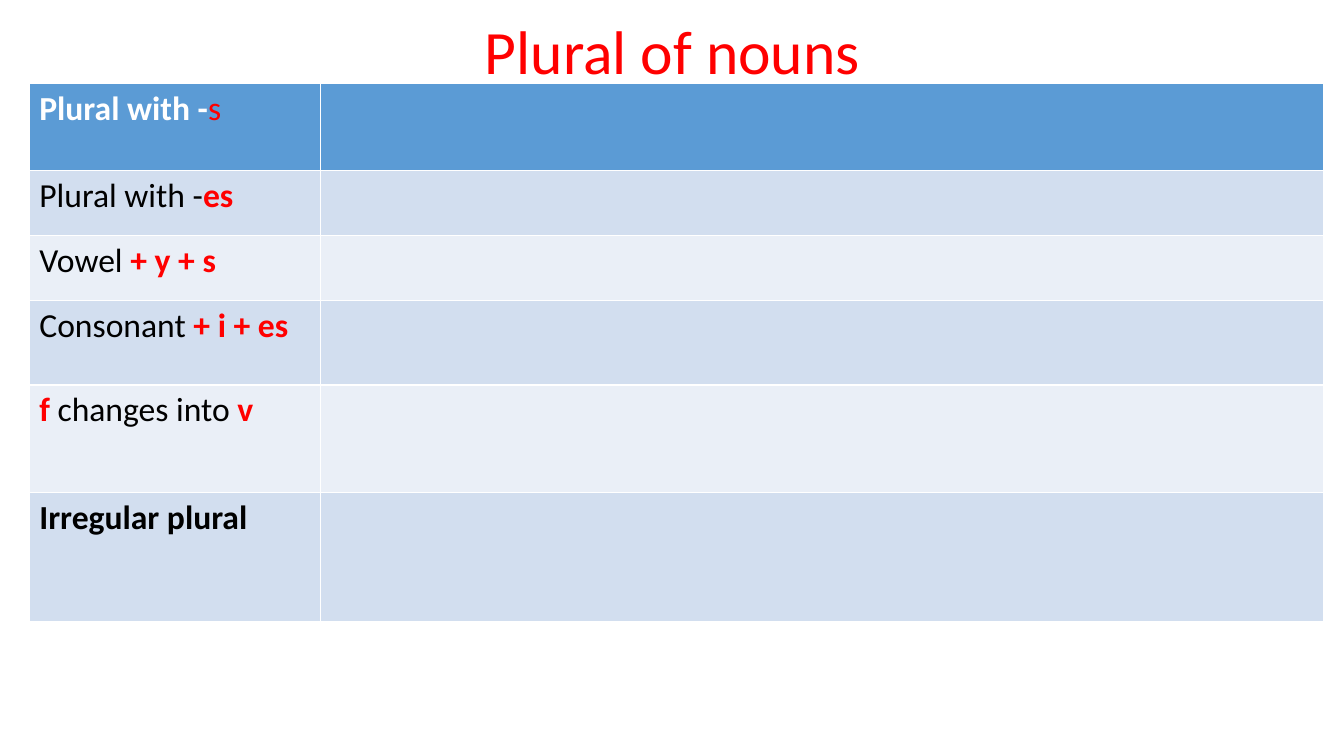
from dataclasses import dataclass

from pptx import Presentation
from pptx.dml.color import RGBColor
from pptx.enum.text import MSO_ANCHOR, MSO_AUTO_SIZE, PP_ALIGN
from pptx.util import Emu, Pt

CENTER = PP_ALIGN.CENTER
MIDDLE = MSO_ANCHOR.MIDDLE
NO_AUTOFIT = MSO_AUTO_SIZE.NONE
TITLE_ONLY = 5
EMU_PER_PX = 9144


@dataclass(frozen=True)
class Theme:
    font: str = "Calibri"
    title_size: int = 44
    rule_size: int = 24
    accent: str = "FF0000"
    ink: str = "000000"
    header_ink: str = "FFFFFF"
    header_fill: str = "5B9BD5"
    band_fills: tuple = ("D2DEEF", "EAEFF7")


THEME = Theme()
COLUMN_WIDTHS = (289, 995)

# Each rule: row height, then its runs as (text, colour, bold).
RULES = (
    (86, (("Plural with -", THEME.header_ink, True), ("s", THEME.accent, False))),
    (65, (("Plural with -", THEME.ink, False), ("es", THEME.accent, True))),
    (64, (("Vowel ", THEME.ink, False), ("+ y + s", THEME.accent, True))),
    (84, (("Consonant ", THEME.ink, False), ("+ i + es", THEME.accent, True))),
    (107, (("f", THEME.accent, True), (" changes into ", THEME.ink, False),
           ("v", THEME.accent, True))),
    (128, (("Irregular plural", THEME.ink, True),)),
)


def px(length):
    return Emu(length * EMU_PER_PX)


def add_run(paragraph, text, size, color, bold):
    run = paragraph.add_run()
    run.text = text
    run.font.name = THEME.font
    run.font.size = Pt(size)
    run.font.bold = bold
    run.font.color.rgb = RGBColor.from_string(color)


def set_title(slide, text):
    title = slide.shapes.title
    title.left, title.top, title.width, title.height = map(px, (92, 14, 1150, 81))
    frame = title.text_frame
    frame.auto_size = NO_AUTOFIT
    frame.vertical_anchor = MIDDLE
    heading = frame.paragraphs[0]
    heading.alignment = CENTER
    heading.line_spacing = 0.9
    add_run(heading, text, THEME.title_size, THEME.accent, False)


def row_fill(row_index):
    if row_index == 0:
        return THEME.header_fill
    return THEME.band_fills[(row_index - 1) % len(THEME.band_fills)]


def add_rules_table(slide, left, top):
    """Add the rules on the left, with an empty column for examples."""
    width = sum(COLUMN_WIDTHS)
    height = sum(row_height for row_height, _ in RULES)
    table = slide.shapes.add_table(
        len(RULES), len(COLUMN_WIDTHS), px(left), px(top), px(width), px(height)
    ).table
    for column, column_width in zip(table.columns, COLUMN_WIDTHS):
        column.width = px(column_width)
    for index, (row_height, runs) in enumerate(RULES):
        row = table.rows[index]
        row.height = px(row_height)
        for cell in row.cells:
            cell.fill.solid()
            cell.fill.fore_color.rgb = RGBColor.from_string(row_fill(index))
        rule = row.cells[0].text_frame.paragraphs[0]
        for text, color, bold in runs:
            add_run(rule, text, THEME.rule_size, color, bold)


def main():
    deck = Presentation()
    deck.slide_width, deck.slide_height = px(1333), px(750)
    slide = deck.slides.add_slide(deck.slide_layouts[TITLE_ONLY])
    set_title(slide, "Plural of nouns")
    add_rules_table(slide, 29, 83)
    deck.save("out.pptx")


if __name__ == "__main__":
    main()
